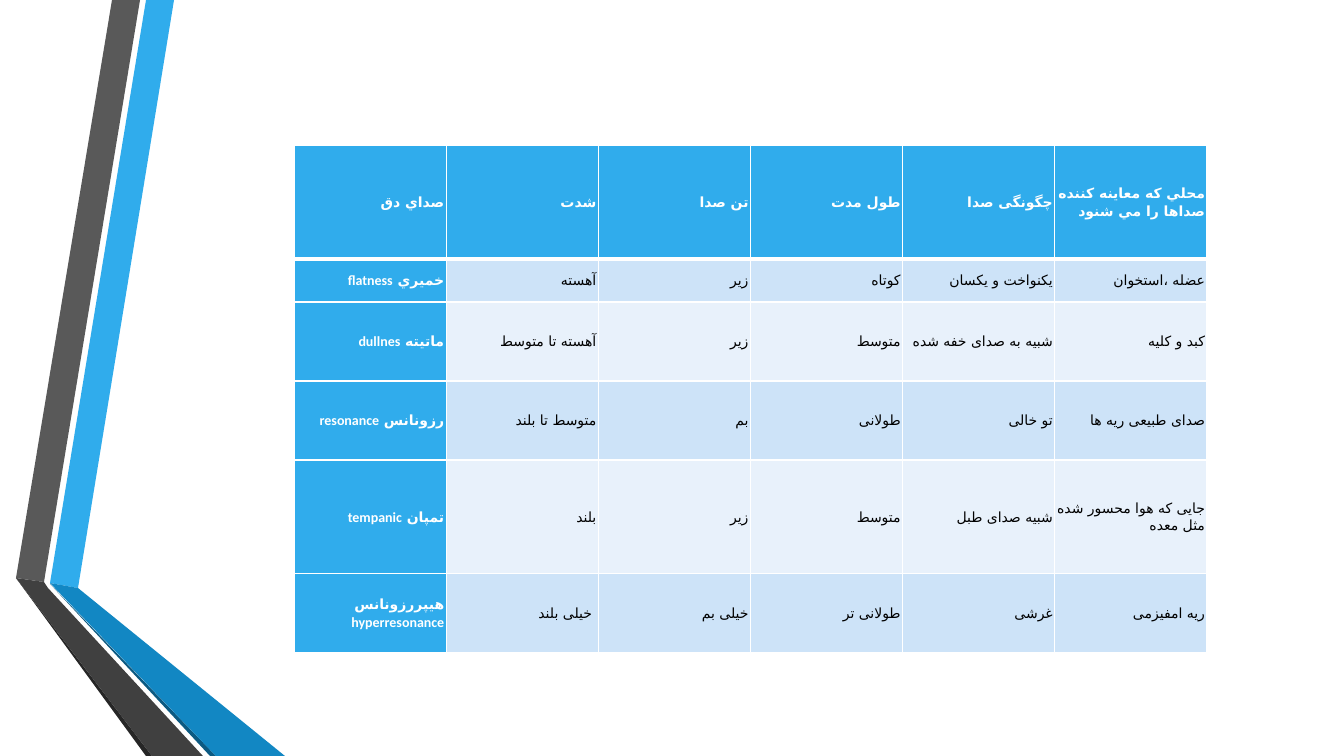
from lxml.etree import SubElement
from pptx import Presentation
from pptx.dml.color import RGBColor
from pptx.enum.text import MSO_ANCHOR, PP_ALIGN
from pptx.oxml.ns import qn
from pptx.util import Pt

PX = 914400 / 100.8
FONT, ARABIC = "Calibri", "DejaVu Sans"
WHITE, BLACK, BLUE = "FFFFFF", "000000", "30ACEC"
BANDS = ["CDE3F8", "E8F1FB"]

# Ribbon facets, back to front: colour and corners in px
RIBBON = [
    (BLUE, [(50, 583), (78, 588), (174, 0), (146, 0)]),
    ("595959", [(140, 0), (112, 0), (16, 578), (44, 582)]),
    ("262626", [(16, 578), (146, 756), (152, 756)]),
    ("0C5A82", [(50, 584), (210, 756), (216, 756)]),
    ("1287C3", [(50, 583), (216, 756), (285, 756), (78, 588)]),
    ("404040", [(203, 756), (48, 588), (44, 582), (16, 578), (152, 756)]),
]

# Percussion sounds: row height in px and cell texts
SOUNDS = [
    (114, ["صداي دق", "شدت", "تن صدا", "طول مدت", "چگونگی صدا",
           "محلي كه معاينه كننده صداها را مي شنود"]),
    (43, ["خميري flatness", "آهسته", "زير", "كوتاه", "يكنواخت و يكسان",
          "عضله ،استخوان"]),
    (79, ["ماتيته dullnes", "آهسته تا متوسط", "زیر", "متوسط",
          "شبیه به صدای خفه شده", "کبد و کلیه"]),
    (79, ["رزونانس resonance", "متوسط تا بلند", "بم", "طولانی", "تو خالی",
          "صدای طبیعی ریه ها"]),
    (114, ["تمپان tempanic", "بلند", "زیر", "متوسط", "شبیه صدای طبل",
           "جایی که هوا محسور شده مثل معده"]),
    (79, ["هیپررزونانس hyperresonance", " خیلی بلند", "خیلی بم",
          "طولانی تر", "غرشی", "ریه امفیزمی"]),
]
LEFT, TOP, WIDE = 294, 145, 913
INSET = 2


def px(n):
    return round(n * PX)


def paint(fill, color):
    fill.solid()
    fill.fore_color.rgb = RGBColor.from_string(color)


def facet(slide, color, pts):
    pen = slide.shapes.build_freeform(*pts[0], scale=PX)
    pen.add_line_segments(pts[1:], close=True)
    shape = pen.convert_to_shape()
    shape.shadow.inherit = False
    shape.line.fill.background()
    paint(shape.fill, color)


def border(cell, row):
    props = cell._tc.get_or_add_tcPr()
    sides = {"L": 1, "R": 1, "T": 3 if row == 1 else 1, "B": 3 if row == 0 else 1}
    for side, width in sides.items():
        line = SubElement(props, qn("a:ln" + side), w=str(Pt(width)))
        fill = SubElement(line, qn("a:solidFill"))
        SubElement(fill, qn("a:srgbClr"), val=WHITE)


def write(cell, text, head):
    cell.vertical_anchor = MSO_ANCHOR.MIDDLE
    cell.margin_left = cell.margin_right = px(INSET)
    cell.margin_top = cell.margin_bottom = px(INSET)
    para = cell.text_frame.paragraphs[0]
    para.alignment = PP_ALIGN.RIGHT
    para.line_spacing = 1.07
    para._p.get_or_add_pPr().set("rtl", "1")
    run = para.add_run()
    run.text = text
    font = run.font
    font.size, font.bold, font.name = Pt(10), head, FONT
    paint(font.fill, WHITE if head else BLACK)
    # Arabic script takes its typeface from the complex-script slot
    SubElement(run._r.get_or_add_rPr(), qn("a:cs"), typeface=ARABIC)


def chart(slide):
    cols = len(SOUNDS[0][1])
    high = sum(h for h, _ in SOUNDS)
    table = slide.shapes.add_table(len(SOUNDS), cols, px(LEFT), px(TOP),
                                   px(WIDE), px(high)).table
    for col in table.columns:
        col.width = px(WIDE / cols)
    for r, (h, texts) in enumerate(SOUNDS):
        table.rows[r].height = px(h)
        for c, text in enumerate(texts):
            cell = table.cell(r, c)
            head = r == 0 or c == 0
            border(cell, r)
            paint(cell.fill, BLUE if head else BANDS[(r - 1) % 2])
            write(cell, text, head)


def main():
    deck = Presentation()
    deck.slide_width, deck.slide_height = px(1344), px(756)
    slide = deck.slides.add_slide(deck.slide_layouts[6])
    paint(slide.background.fill, WHITE)
    for color, pts in RIBBON:
        facet(slide, color, pts)
    chart(slide)
    deck.save("out.pptx")


if __name__ == "__main__":
    main()
